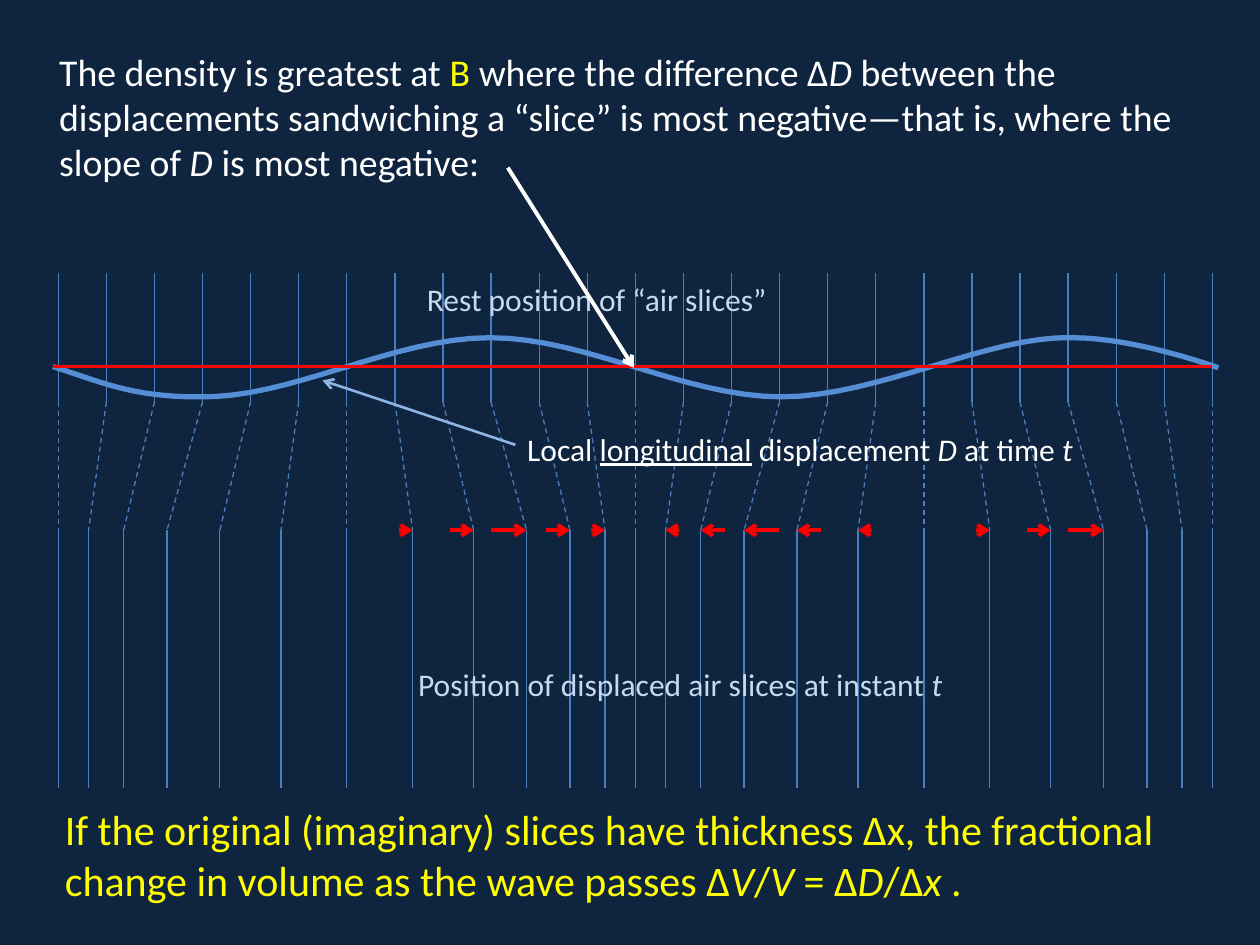
from dataclasses import dataclass
from math import pi, sin
from lxml.etree import SubElement
from pptx import Presentation
from pptx.dml.color import RGBColor
from pptx.enum.dml import MSO_LINE
from pptx.enum.shapes import MSO_CONNECTOR
from pptx.enum.text import MSO_ANCHOR, MSO_AUTO_SIZE, PP_ALIGN
from pptx.oxml.ns import qn
from pptx.util import Pt


@dataclass(frozen=True)
class Theme:
    font: str = "Calibri"
    back: str = "0F243E"
    white: str = "FFFFFF"
    gold: str = "FFFF00"
    pale: str = "C6D9F1"
    slice: str = "4B7EBC"
    wave: str = "558ED5"
    lead: str = "8EB4E3"
    red: str = "FF0000"
    head: float = 21.6
    label: float = 18
    note: float = 24


class Deck:
    def __init__(self, theme):
        self.theme = theme
        self.show = Presentation()
        self.show.slide_width, self.show.slide_height = Pt(720), Pt(540)
        self.slide = self.show.slides.add_slide(self.show.slide_layouts[5])
        fill = self.slide.background.fill
        fill.solid()
        fill.fore_color.rgb = RGBColor.from_string(theme.back)

    def words(self, shape, runs, size, color):
        frame = shape.text_frame
        frame.word_wrap = True
        frame.auto_size = MSO_AUTO_SIZE.NONE
        para = frame.paragraphs[0]
        para.alignment = PP_ALIGN.LEFT
        para.font.name = self.theme.font
        para.font.size = Pt(size)
        para.font.color.rgb = RGBColor.from_string(color)
        for text, mark in runs:
            run = para.add_run()
            run.text = text
            if mark == "i":
                run.font.italic = True
            elif mark == "u":
                run.font.underline = True
            elif mark:
                run.font.color.rgb = RGBColor.from_string(mark)

    def title(self, box, runs, size, color):
        shape = self.slide.shapes.title
        shape.left, shape.top, shape.width, shape.height = map(Pt, box)
        shape.text_frame.vertical_anchor = MSO_ANCHOR.MIDDLE
        self.words(shape, runs, size, color)

    def text(self, box, runs, size, color):
        shape = self.slide.shapes.add_textbox(*map(Pt, box))
        self.words(shape, runs, size, color)

    def line(self, start, end, color, width=0.75, dash=False, arrow=False):
        link = self.slide.shapes.add_connector(
            MSO_CONNECTOR.STRAIGHT, *map(Pt, start + end))
        link.line.color.rgb = RGBColor.from_string(color)
        link.line.width = Pt(width)
        if dash:
            link.line.dash_style = MSO_LINE.DASH
        props = link._element.spPr
        if arrow:
            SubElement(props.find(qn("a:ln")), qn("a:tailEnd"), type="arrow")
        SubElement(props, qn("a:effectLst"))

    def curve(self, knots, color, width, steps=16):
        dots = []
        for k in range(0, len(knots) - 1, 3):
            for n in range(1, steps + 1):
                t = n / steps
                parts = (1 - t) ** 3, 3 * t * (1 - t) ** 2, 3 * t * t * (1 - t), t ** 3
                dots.append(tuple(
                    Pt(sum(p * knot[axis] for p, knot in zip(parts, knots[k:k + 4])))
                    for axis in (0, 1)))
        trace = self.slide.shapes.build_freeform(*map(Pt, knots[0]))
        trace.add_line_segments(dots, close=False)
        shape = trace.convert_to_shape()
        shape.shadow.inherit = False
        shape.fill.background()
        shape.line.color.rgb = RGBColor.from_string(color)
        shape.line.width = Pt(width)


LEFT, GAP, SWING = 33.3, 27.48, 20.3
TOP, MID, LOW, BASE = 156.2, 229.7, 303, 450
WAVE = [(30.2, 209.5), (57.6, 218.2), (74.9, 226.8), (113, 226.8),
        (166.3, 228.2), (223.9, 193), (280.1, 193),
        (335.5, 193), (391, 226.8), (446.4, 226.8),
        (501.8, 226.8), (565.2, 191.5), (612.7, 193),
        (649.4, 193), (696.2, 210.2), (696.2, 210.2)]
SHAFT = {1: 7, 2: 13.7, 3: 20.2, 4: 13.7, 5: 7}


def main():
    theme = Theme()
    deck = Deck(theme)
    deck.title((26.6, 21.6, 666, 90), [
        ("The density is greatest at ", ""), ("B", theme.gold),
        (" where the difference Δ", ""), ("D", "i"),
        (" between the displacements sandwiching a “slice” is most "
         "negative—that is, where the slope of ", ""),
        ("D", "i"), (" is most negative:", "")], theme.head, theme.white)

    rest = [LEFT + GAP * n for n in range(25)]
    moved = [x - SWING * sin(pi * n / 6) for n, x in enumerate(rest)]
    for x, to in zip(rest, moved):
        deck.line((to, LOW), (to, BASE), theme.slice)
        deck.line((x, TOP), (x, MID), theme.slice)
        deck.line((x, MID), (to, LOW), theme.slice, dash=True)
    for n in range(7, 22):
        if n % 6:
            side = 1 if moved[n] > rest[n] else -1
            deck.line((moved[n] - side * SHAFT[n % 6], LOW), (moved[n], LOW),
                      theme.red, 2.25, arrow=True)

    deck.curve(WAVE, theme.wave, 3)
    deck.line((30.2, 209.6), (692.8, 209.6), theme.red, 1.5)
    deck.text((236.9, 156.2, 247, 29.5), [("Rest position of “air slices”", "")],
              theme.label, theme.pale)
    deck.text((294.2, 241.9, 371, 25.2), [
        ("Local ", ""), ("longitudinal", "u"), (" displacement ", ""), ("D", "i"),
        (" at time ", ""), ("t", "i")], theme.label, theme.white)
    deck.line((294.5, 254.2), (184.3, 217.4), theme.lead, 1.5, arrow=True)
    deck.text((231.8, 376.6, 392.4, 29.5), [
        ("Position of displaced air slices at instant ", ""), ("t", "i")],
        theme.label, theme.pale)
    deck.line((290.2, 95.8), (362.2, 210.2), theme.white, 2.25, arrow=True)
    deck.text((30, 455.8, 648, 65.5), [
        ("If the original (imaginary) slices have thickness Δx, the fractional "
         "change in volume as the wave passes Δ", ""),
        ("V", "i"), ("/", ""), ("V", "i"), (" = Δ", ""), ("D", "i"),
        ("/Δ", ""), ("x", "i"), (" .", "")], theme.note, theme.gold)
    deck.show.save("out.pptx")


if __name__ == "__main__":
    main()
